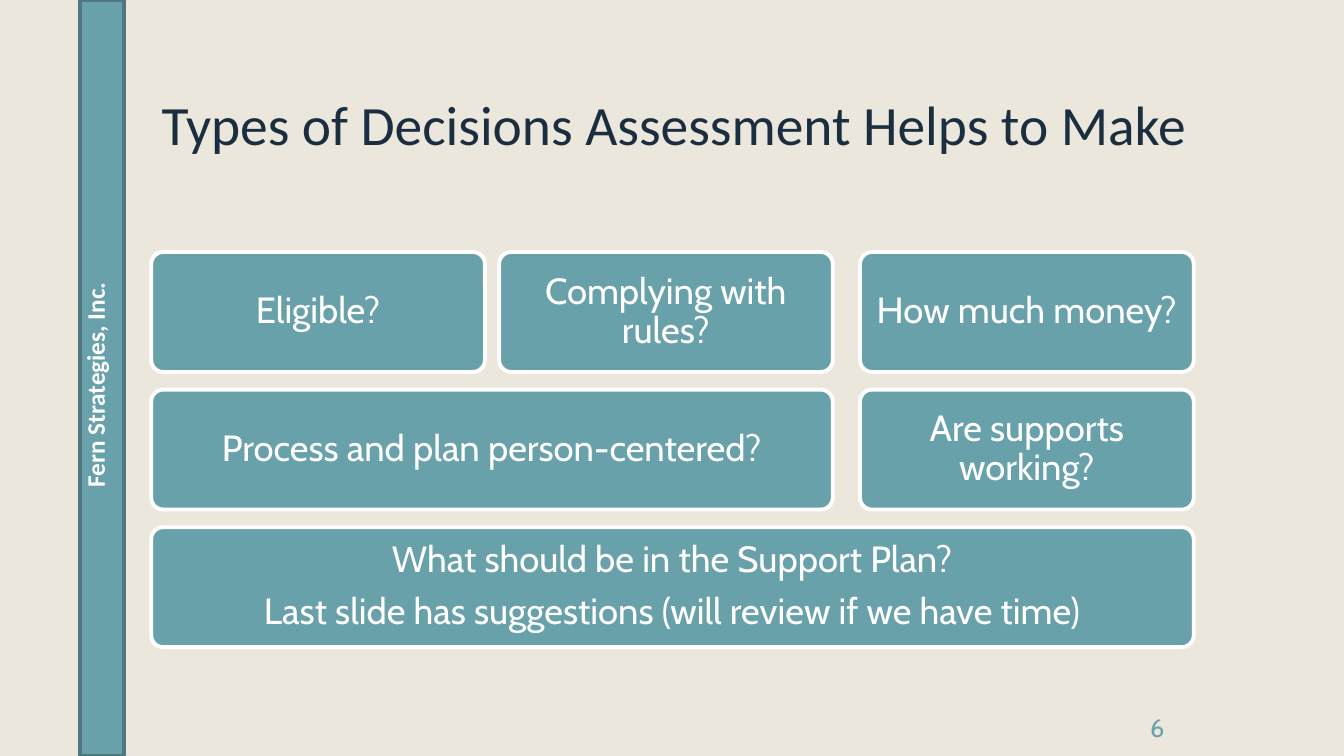
from pptx import Presentation
from pptx.dml.color import RGBColor
from pptx.enum.shapes import MSO_SHAPE
from pptx.enum.text import MSO_ANCHOR, PP_ALIGN
from pptx.util import Inches, Pt

RECTANGLE, ROUNDED = MSO_SHAPE.RECTANGLE, MSO_SHAPE.ROUNDED_RECTANGLE
TOP, MIDDLE = MSO_ANCHOR.TOP, MSO_ANCHOR.MIDDLE
LEFT, CENTER = PP_ALIGN.LEFT, PP_ALIGN.CENTER
SAND = RGBColor(0xEB, 0xE7, 0xDD)
TEAL = RGBColor(0x69, 0xA1, 0xAB)
DARK_TEAL = RGBColor(0x4E, 0x77, 0x7F)
NAVY = RGBColor(0x1A, 0x2E, 0x40)
WHITE = RGBColor(0xFF, 0xFF, 0xFF)

SLIDE_W, SLIDE_H = 13.33, 7.5
COLUMN_W, ROW_H = 3.31, 1.19
COLUMN_GAPS = (0.14, 0.27)
ROW_GAP = 0.175

# (row, first column, columns spanned, text)
DECISIONS = (
    (0, 0, 1, "Eligible?"),
    (0, 1, 1, "Complying with rules?"),
    (0, 2, 1, "How much money?"),
    (1, 0, 2, "Process and plan person-centered?"),
    (1, 2, 1, "Are supports working?"),
    (2, 0, 3, "What should be in the Support Plan?\n"
              "Last slide has suggestions (will review if we have time)"),
)


def write(frame, text, font, size, color, align=CENTER, anchor=TOP,
          bold=False, line_spacing=None, space_after=None):
    """Fill a text frame with uniformly formatted paragraphs."""
    frame.text = text
    frame.word_wrap = True
    frame.vertical_anchor = anchor
    for paragraph in frame.paragraphs:
        paragraph.alignment = align
        paragraph.line_spacing = line_spacing
        paragraph.space_after = space_after
        for run in paragraph.runs:
            run.font.name = font
            run.font.size = Pt(size)
            run.font.bold = bold
            run.font.color.rgb = color


def add_panel(slide, kind, box, outline):
    """Add a teal shape with the given outline colour."""
    panel = slide.shapes.add_shape(kind, *map(Inches, box))
    panel.shadow.inherit = False
    panel.fill.solid()
    panel.fill.fore_color.rgb = TEAL
    panel.line.color.rgb = outline
    panel.line.width = Pt(2.75)
    return panel


def add_sidebar(slide, left, top, width, height):
    """Draw the full-height band with the firm's name running upwards."""
    add_panel(slide, RECTANGLE, (left, top, width, height), DARK_TEAL)
    firm = slide.shapes.add_textbox(
        Inches(left - 0.05), Inches(top + 0.92), Inches(0.5), Inches(5.8))
    write(firm.text_frame, "Fern Strategies, Inc.", "Calibri", 18, WHITE, bold=True)
    firm.element.txBody.bodyPr.set("vert", "vert270")


def add_title(slide, left, top, width, height):
    """Place the slide title."""
    title = slide.shapes.add_textbox(*map(Inches, (left, top, width, height)))
    write(title.text_frame, "Types of Decisions Assessment Helps to Make",
          "Calibri", 39.6, NAVY, line_spacing=0.89)


def add_decisions(slide, left, top):
    """Lay out the decision tiles on a grid of three columns and rows."""
    for row, column, span, text in DECISIONS:
        x = left + column * COLUMN_W + sum(COLUMN_GAPS[:column])
        y = top + row * (ROW_H + ROW_GAP)
        width = span * COLUMN_W + sum(COLUMN_GAPS[column:column + span - 1])
        tile = add_panel(slide, ROUNDED, (x, y, width, ROW_H), WHITE)
        tile.adjustments[0] = 0.1
        frame = tile.text_frame
        frame.margin_left = frame.margin_right = Inches(0.11)
        frame.margin_top = frame.margin_bottom = Inches(0.11)
        write(frame, text, "Cabin", 26, WHITE, anchor=MIDDLE,
              line_spacing=0.9, space_after=Pt(9.1))


def add_page_number(slide, left, top, width, height):
    """Place the page number."""
    number = slide.shapes.add_textbox(*map(Inches, (left, top, width, height)))
    write(number.text_frame, "6", "Cabin", 18, TEAL, align=LEFT)


def main():
    """Build and save the slide."""
    deck = Presentation()
    deck.slide_width, deck.slide_height = Inches(SLIDE_W), Inches(SLIDE_H)
    slide = deck.slides.add_slide(deck.slide_layouts[6])
    slide.background.fill.solid()
    slide.background.fill.fore_color.rgb = SAND
    add_sidebar(slide, 0.79, 0, 0.44, SLIDE_H)
    add_page_number(slide, 11.31, 7.02, 0.55, 0.4)
    add_decisions(slide, 1.5, 2.5)
    add_title(slide, 1.5, 0.92, 10.37, 0.98)
    deck.save("out.pptx")


if __name__ == "__main__":
    main()
